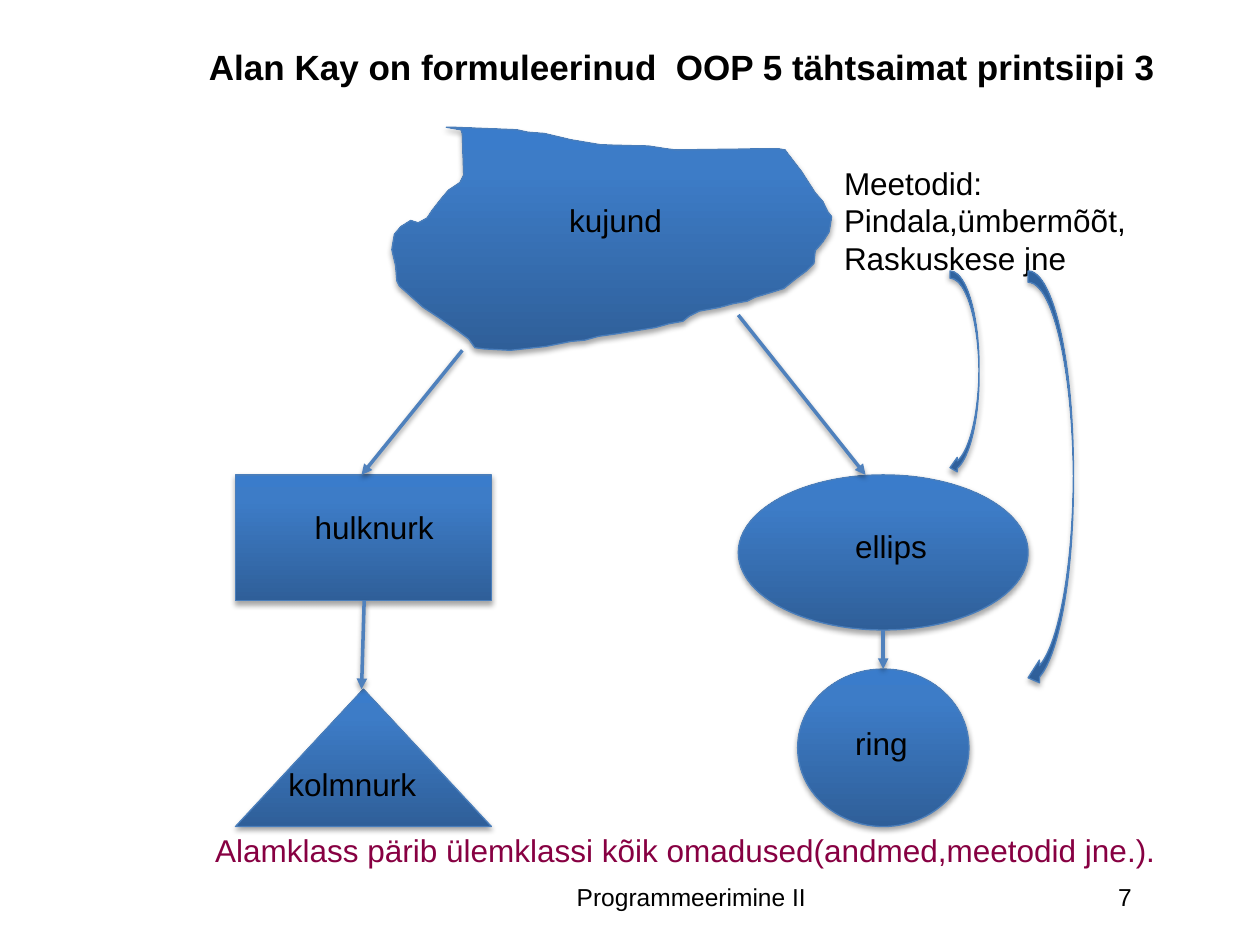
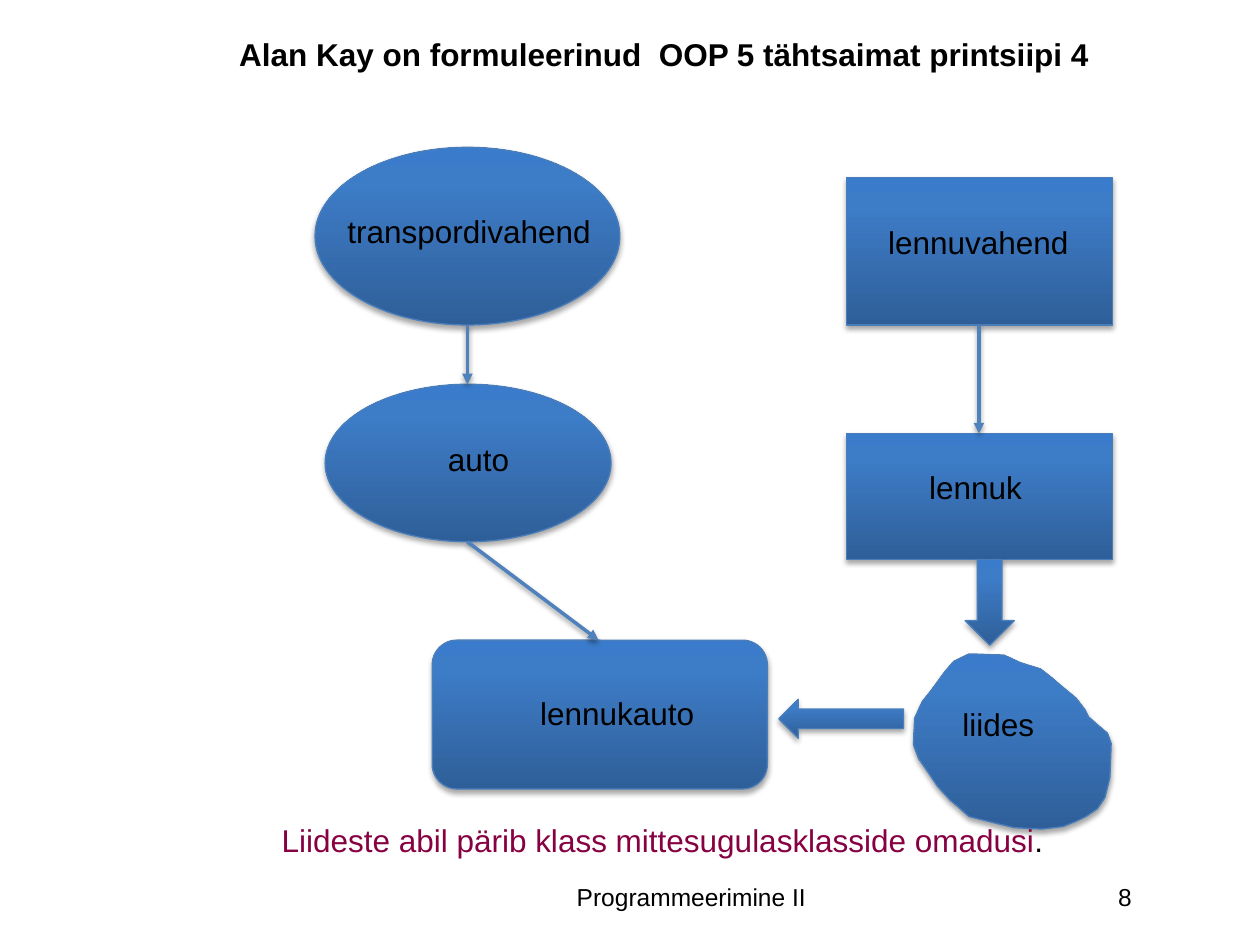
"""Build two slides on inheritance and interfaces in OOP."""
from dataclasses import dataclass

from lxml.etree import SubElement as Sub
from pptx import Presentation
from pptx.dml.color import RGBColor as Rgb
from pptx.enum.shapes import MSO_CONNECTOR as Link, MSO_SHAPE as Kind
from pptx.enum.text import PP_ALIGN as Align
from pptx.oxml.ns import qn
from pptx.util import Pt

HUES = {
    "ink": "000000", "wine": "870042", "edge": "4A7EBB", "link": "4F81BD",
    "low": "2F5F99", "mid": "3D7CC7", "top": "3A7CCB",
}
STOPS = ((0, "low"), (80, "mid"), (100, "top"))
INSET = {
    "word_wrap": True, "margin_left": Pt(7.2), "margin_right": Pt(7.2),
    "margin_top": Pt(3.6), "margin_bottom": Pt(3.6),
}
FOOT = "Programmeerimine II "


@dataclass(frozen=True)
class Block:
    kind: Kind
    x: float
    y: float
    w: float
    h: float


@dataclass(frozen=True)
class Blob:
    dots: tuple


@dataclass(frozen=True)
class Arrow:
    x: float
    y: float
    to_x: float
    to_y: float


@dataclass(frozen=True)
class Label:
    text: str
    x: float
    y: float
    w: float
    h: float = 28.8
    dent: float = 0
    size: float = 18
    bold: bool = False
    hue: str = "ink"
    align: Align = Align.LEFT
    tail: str = ""


def tint(name: str) -> Rgb:
    """Give the named colour."""
    return Rgb.from_string(HUES[name])


def apply(obj, vals: dict) -> None:
    """Set each format value on the object."""
    for key, val in vals.items():
        setattr(obj, key, val)


def shade(props, alpha: int, dist: float) -> None:
    """Put a soft shadow below a shape."""
    box = props.find(qn("a:effectLst"))
    if box is None:
        box = Sub(props, qn("a:effectLst"))
    cast = Sub(box, qn("a:outerShdw"), blurRad=str(Pt(3.1)),
               dist=str(Pt(dist)), dir="5400000", rotWithShape="0")
    tone = Sub(cast, qn("a:srgbClr"), val=HUES["ink"])
    Sub(tone, qn("a:alpha"), val=str(alpha * 1000))


def dress(shape) -> None:
    """Give a shape the shared gradient, edge and shadow."""
    shape.fill.gradient()
    shape.fill.gradient_angle = 90
    props = shape.element.spPr
    stops = props.find(qn("a:gradFill")).find(qn("a:gsLst"))
    for old in list(stops):
        stops.remove(old)
    for pos, hue in STOPS:
        stop = Sub(stops, qn("a:gs"), pos=str(pos * 1000))
        Sub(stop, qn("a:srgbClr"), val=HUES[hue])
    shape.line.color.rgb = tint("edge")
    shape.line.width = Pt(0.75)
    shape.shadow.inherit = False
    shade(props, 35, 1.8)


def draw_block(slide, item: Block) -> None:
    """Draw a preset shape."""
    spot = map(Pt, (item.x, item.y, item.w, item.h))
    dress(slide.shapes.add_shape(item.kind, *spot))


def draw_blob(slide, item: Blob) -> None:
    """Draw a closed free outline."""
    dots = [(Pt(x), Pt(y)) for x, y in item.dots]
    pen = slide.shapes.build_freeform(*dots[0])
    pen.add_line_segments(dots[1:], close=True)
    dress(pen.convert_to_shape())


def draw_arrow(slide, item: Arrow) -> None:
    """Draw a straight line with a head at its end."""
    ends = map(Pt, (item.x, item.y, item.to_x, item.to_y))
    link = slide.shapes.add_connector(Link.STRAIGHT, *ends)
    link.line.color.rgb = tint("link")
    link.line.width = Pt(2)
    props = link.element.spPr
    Sub(props.find(qn("a:ln")), qn("a:tailEnd"), type="triangle")
    shade(props, 38, 1.6)


def draw_label(slide, item: Label) -> None:
    """Write a text box, one paragraph to a line."""
    spot = map(Pt, (item.x, item.y, item.w, item.h))
    frame = slide.shapes.add_textbox(*spot).text_frame
    apply(frame, INSET)
    face = {"name": "Arial", "size": Pt(item.size), "bold": item.bold}
    for num, text in enumerate(item.text.split("\n")):
        para = frame.add_paragraph() if num else frame.paragraphs[0]
        para.alignment = item.align
        if item.dent:
            para._p.get_or_add_pPr().set("marL", str(Pt(item.dent)))
        for part, hue in ((text, item.hue), (item.tail, "ink")):
            if part:
                run = para.add_run()
                run.text = part
                apply(run.font, face)
                run.font.color.rgb = tint(hue)


DRAW = {Block: draw_block, Blob: draw_blob, Arrow: draw_arrow, Label: draw_label}

FIGURE = Blob((
    (255, 72.7), (257.8, 72.7), (295.2, 74.2), (301.7, 75.6), (311, 76.3),
    (326.2, 79.9), (343.4, 82.8), (370.8, 83.5), (380.2, 85), (385.9, 85.7),
    (444.2, 85), (448.6, 85.7), (450.7, 88.6), (457.9, 97.9), (465.8, 110.2),
    (470.2, 115.2), (473, 121), (475.2, 123.8), (473.8, 132.5), (470.2, 138.2),
    (465.8, 143.3), (465.1, 150.5), (460.8, 154.8), (455, 159.1),
    (447.8, 164.9), (438.5, 167.8), (431.3, 169.9), (427, 172.1),
    (419, 173.5), (411.1, 175.7), (399.6, 177.8), (393.8, 180.7),
    (390.2, 183.6), (382.3, 185), (374.4, 187.2), (352.1, 190.8),
    (342, 192.2), (334.1, 194.4), (326.2, 195.1), (311.8, 198),
    (291.6, 200.2), (276.5, 199.4), (271.4, 198.7), (267.8, 193.7),
    (262.1, 189.4), (250.6, 181.4), (241.9, 175.7), (228.2, 163.4),
    (226.8, 160.6), (226.1, 151.9), (223.9, 142.6), (225.4, 133.9),
    (229, 129.6), (234.7, 126), (239, 127.4), (244.1, 124.6), (247, 120.2),
    (252, 113.8), (256.3, 108.7), (262.8, 104.4), (265, 100.1),
    (264.2, 76.3), (263.5, 74.2),
))
BRIDGE = Blob((
    (555.8, 373.7), (573.8, 374.4), (583.2, 378.7), (594.7, 382.3),
    (601.2, 387.4), (607, 392.4), (614.9, 398.9), (619.9, 405.4),
    (622.1, 409.7), (628.6, 415.4), (632.9, 419), (635, 424.8),
    (634.3, 444.2), (631.4, 455.8), (627.1, 462.2), (620.6, 466.6),
    (614.9, 469.4), (607.7, 472.3), (595.4, 473.8), (579.6, 473),
    (568.1, 470.2), (553.7, 466.6), (547.2, 460.8), (542.9, 457.2),
    (535.7, 449.3), (531.4, 442.8), (524.9, 433.4), (522, 425.5),
    (522.7, 410.4), (527, 401), (532.1, 394.6), (540, 383.8), (545, 378),
    (553.7, 373.7),
))
HEAD = "Alan Kay on formuleerinud  OOP 5 tähtsaimat printsiipi "

SHAPES = (
    Label(HEAD + "3", 112.3, 22.3, 562.3, 31, size=20, bold=True),
    Block(Kind.RECTANGLE, 134.6, 271.4, 146.2, 72),
    FIGURE,
    Block(Kind.OVAL, 421.9, 271.4, 165.6, 88.6),
    Block(Kind.ISOSCELES_TRIANGLE, 134.6, 393.8, 146.2, 78.5),
    Block(Kind.OVAL, 455.8, 382.3, 97.9, 90),
    Arrow(421.9, 180, 494.6, 271.4),
    Arrow(264.2, 200.2, 206.6, 271.4),
    Arrow(208.1, 343.4, 206.6, 393.8),
    Label("kujund", 298.1, 111.6, 106.6, dent=20),
    Label("ellips", 461.5, 297.4, 97.9, dent=20),
    Label("hulknurk", 157.7, 286.6, 106.6, dent=15),
    Label("kolmnurk", 157.7, 433.4, 90),
    Label("ring", 466.6, 410.4, 76.3, dent=15),
    Label("Meetodid:\nPindala,ümbermõõt,\nRaskuskese jne", 475.2, 90, 179.3, 72),
    Label("Alamklass pärib ülemklassi kõik omadused(andmed,meetodid jne.).",
          115.9, 471.6, 586.8, hue="wine"),
    Arrow(504.7, 360, 504.7, 382.3),
    Block(Kind.CURVED_LEFT_ARROW, 587.5, 154.8, 25.9, 239),
    Block(Kind.CURVED_LEFT_ARROW, 542.9, 154.8, 16.6, 116.6),
)
CRAFT = (
    Block(Kind.OVAL, 180, 84.2, 174.2, 101.5),
    Block(Kind.OVAL, 185.8, 219.6, 163.4, 90),
    Block(Kind.RECTANGLE, 483.8, 101.5, 151.9, 84.2),
    Block(Kind.RECTANGLE, 483.8, 247.7, 151.9, 72),
    Block(Kind.ROUNDED_RECTANGLE, 247, 365.8, 191.5, 85),
    Label("transpordivahend", 191.5, 117.4, 163.4),
    Label("auto", 213.8, 247.7, 123.8, dent=35),
    Label("lennuvahend", 500.4, 123.8, 123.8),
    Label("lennuk", 483.8, 264.2, 140.4, dent=40),
    BRIDGE,
    Label("liides", 542.9, 399.6, 69.8),
    Label("lennukauto", 281.5, 393.1, 140.4, dent=20),
    Arrow(267.1, 185.8, 267.1, 219.6),
    Arrow(559.4, 185.8, 559.4, 247.7),
    Arrow(267.1, 309.6, 342, 365.8),
    Block(Kind.DOWN_ARROW, 551.5, 319.7, 28.1, 49),
    Block(Kind.LEFT_ARROW, 445, 399.6, 71.3, 22.3),
    Label(HEAD + "4", 129.6, 16.6, 534.2, bold=True),
    Label("Liideste abil pärib klass mittesugulasklasside omadusi",
          123.8, 465.8, 517.7, dent=30, hue="wine", tail="."),
)


def main() -> None:
    """Draw both slides and save the deck."""
    deck = Presentation()
    apply(deck, {"slide_width": Pt(720), "slide_height": Pt(540)})
    for num, items in enumerate((SHAPES, CRAFT), 7):
        slide = deck.slides.add_slide(deck.slide_layouts[6])
        foot = (
            Label(FOOT, 206.6, 500.4, 380.9, size=14, align=Align.CENTER),
            Label(str(num), 592.6, 500.4, 61.2, size=14, align=Align.RIGHT),
        )
        for item in foot + items:
            DRAW[type(item)](slide, item)
    deck.save("out.pptx")


if __name__ == "__main__":
    main()
